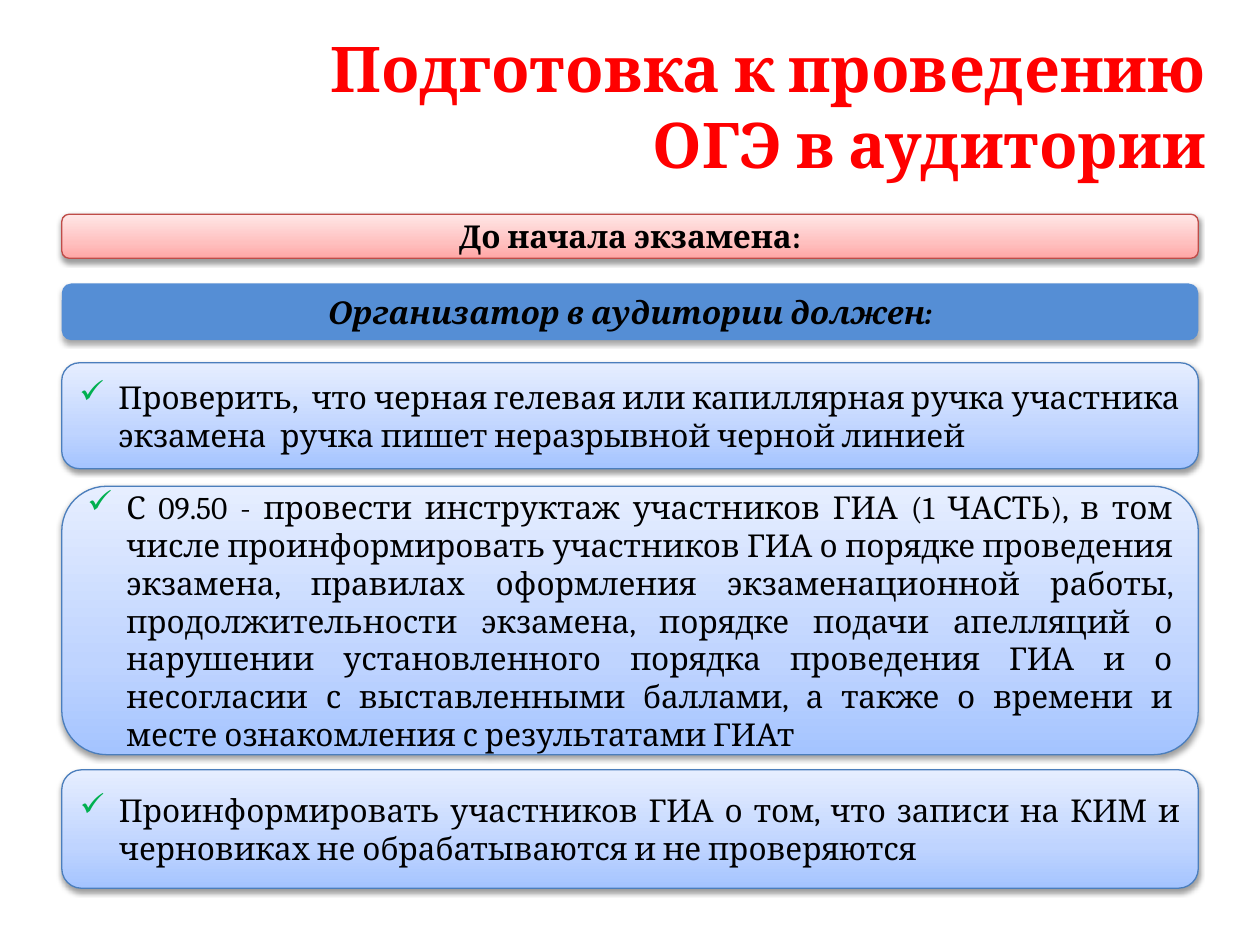
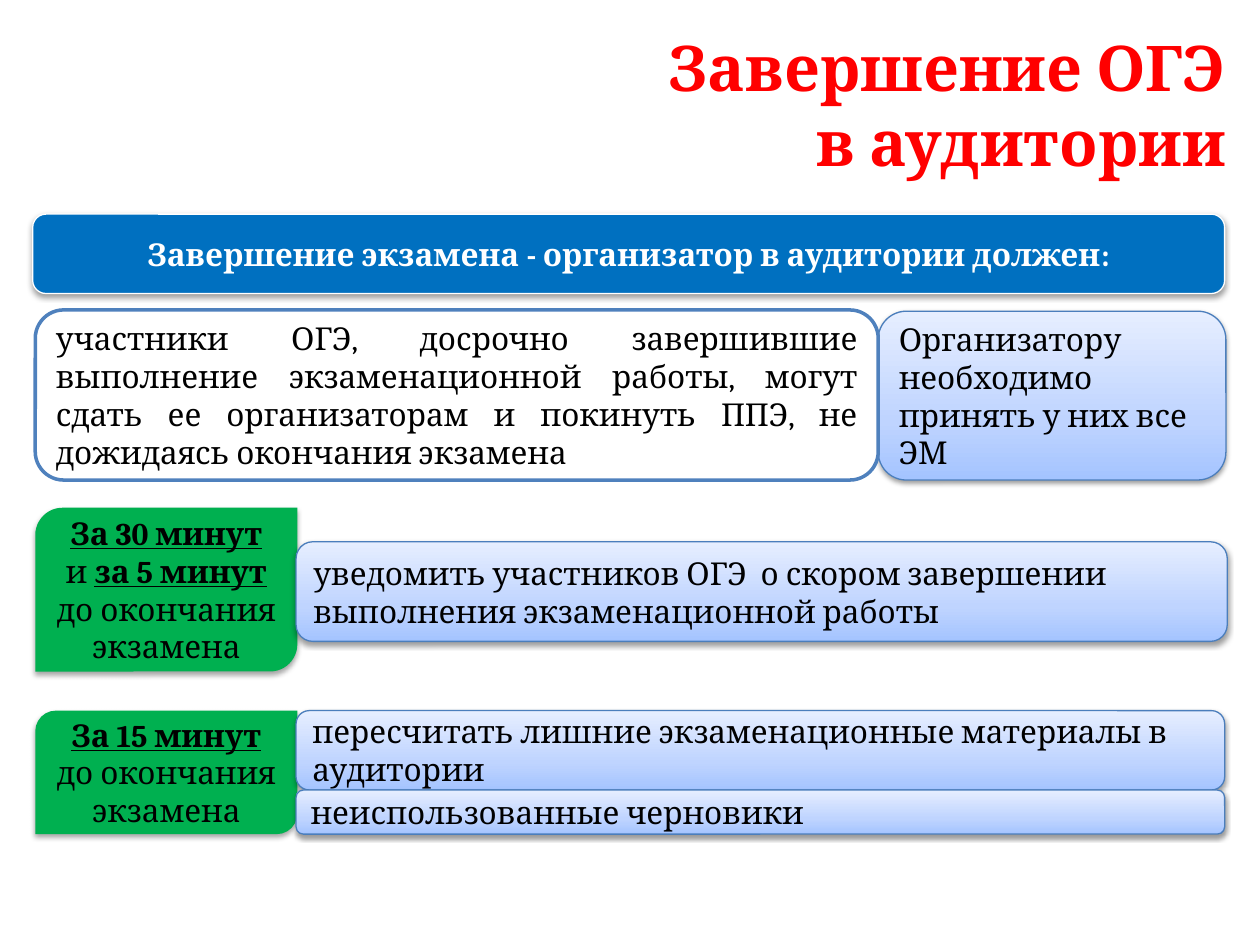
import copy

import pptx
import pptx.util
import pptx.dml.color
import pptx.enum.shapes
import pptx.enum.text
import pptx.oxml
import pptx.oxml.ns
from lxml import etree

Inches = pptx.util.Inches
Pt = pptx.util.Pt
SHAPE = pptx.enum.shapes.MSO_SHAPE
ALIGN = pptx.enum.text.PP_ALIGN
qn = pptx.oxml.ns.qn

FONT = "Cambria"
COLORS = {
    "title": "FF0000", "text": "000000", "white": "FFFFFF", "shadow": "000000",
    "band": "558ED5", "header": "0070C0", "timing": "00B050", "check": "00B050",
    "blue_line": "4B7EBC", "red_line": "BF4C48", "frame": "4F81BD",
}
# Gradients run from the bottom edge to the top edge
GRADIENTS = {
    "blue": [(0, "A4C4FF"), (0.35, "BFD4FF"), (1, "E6EEFF")],
    "red": [(0, "FFA6A5"), (0.35, "FFC0BF"), (1, "FFE7E7")],
}


def rgb(hex_text):
    return pptx.dml.color.RGBColor.from_string(hex_text)


def style_font(font, size=18, color="text", bold=False, italic=False):
    font.name = FONT
    font.size = Pt(size)
    font.bold = bold
    font.italic = italic
    font.color.rgb = rgb(COLORS[color])


def paint_gradient(box, stops):
    box.fill.gradient()
    box.fill.gradient_angle = 90
    stop_list = box._element.spPr.find(".//" + qn("a:gsLst"))
    stop_list.insert(1, copy.deepcopy(stop_list[0]))
    for stop, (position, color) in zip(box.fill.gradient_stops, stops):
        stop.position = position
        stop.color.rgb = rgb(color)


def add_shadow(box, opacity, distance):
    effects = box._element.spPr.find(qn("a:effectLst"))
    shadow = etree.SubElement(
        effects, qn("a:outerShdw"), blurRad=str(Pt(3.1)), dist=str(Pt(distance)),
        dir="5400000", rotWithShape="0")
    color = etree.SubElement(shadow, qn("a:srgbClr"), val=COLORS["shadow"])
    etree.SubElement(color, qn("a:alpha"), val=str(opacity * 1000))


def add_check(para):
    """Give the paragraph a green tick with a hanging indent."""
    properties = para._p.get_or_add_pPr()
    properties.set("marL", str(Inches(0.31)))
    properties.set("indent", str(-Inches(0.31)))
    bullet_color = etree.SubElement(properties, qn("a:buClr"))
    etree.SubElement(bullet_color, qn("a:srgbClr"), val=COLORS["check"])
    etree.SubElement(properties, qn("a:buChar"), char="✓")


def add_panel(page, place, fill, line=None, width=0.75, shadow=True,
              preset=SHAPE.ROUNDED_RECTANGLE):
    box = page.shapes.add_shape(preset, *map(Inches, place))
    box.shadow.inherit = False
    if fill in GRADIENTS:
        paint_gradient(box, GRADIENTS[fill])
    else:
        box.fill.solid()
        box.fill.fore_color.rgb = rgb(COLORS[fill])
    if line:
        box.line.color.rgb = rgb(COLORS[line])
        box.line.width = Pt(width)
    else:
        box.line.fill.background()
    if shadow:
        add_shadow(box, *((38, 1.6) if line else (35, 1.8)))
    box.text_frame.word_wrap = True
    box.text_frame.vertical_anchor = pptx.enum.text.MSO_ANCHOR.MIDDLE
    return box


def write(box, text, align=ALIGN.LEFT, check=False, **font_style):
    para = box.text_frame.paragraphs[0]
    para.text = text
    para.alignment = align
    if check:
        add_check(para)
    style_font(para.font, **font_style)
    # Shape style colours yield to the run colour only
    for span in para.runs:
        span.font.color.rgb = para.font.color.rgb


def add_blue_panel(page, place, text, **options):
    write(add_panel(page, place, "blue", "blue_line"), text, **options)


def add_timing(page, place, paragraphs):
    """Green label; each paragraph is a list of (text, stressed) spans."""
    box = add_panel(page, place, "timing", preset=SHAPE.ROUND_2_DIAG_RECTANGLE)
    frame = box.text_frame
    for index, spans in enumerate(paragraphs):
        para = frame.add_paragraph() if index else frame.paragraphs[0]
        para.alignment = ALIGN.CENTER
        for text, stressed in spans:
            span = para.add_run()
            span.text = text
            style_font(span.font, bold=stressed)
            span.font.underline = stressed


def add_page(deck, title, place):
    page = deck.slides.add_slide(deck.slide_layouts[5])
    box = page.shapes.title
    box.left, box.top, box.width, box.height = map(Inches, place)
    box.text_frame.word_wrap = True
    box.text_frame.auto_size = pptx.enum.text.MSO_AUTO_SIZE.NONE
    box.text_frame.vertical_anchor = pptx.enum.text.MSO_ANCHOR.MIDDLE
    write(box, title, ALIGN.RIGHT, size=36, color="title", bold=True)
    return page


def build_preparation(deck):
    page = add_page(deck, "Подготовка к проведению\vОГЭ в аудитории", (0.67, 0.21, 9, 1.25))
    left, width = 0.49, 9.02

    # Heading bands
    heading = add_panel(page, (left, 1.7, width, 0.35), "red", "red_line")
    write(heading, "До начала экзамена:", ALIGN.CENTER, bold=True)
    band = add_panel(page, (left, 2.25, width, 0.45), "band")
    write(band, "Организатор в аудитории должен:", ALIGN.CENTER, bold=True, italic=True)

    # Duties
    duties = [
        (2.88, 0.84, ALIGN.LEFT,
         "Проверить,  что черная гелевая или капиллярная ручка участника экзамена  "
         "ручка пишет неразрывной черной линией"),
        (3.86, 2.13, ALIGN.JUSTIFY,
         "С 09.50 - провести инструктаж участников ГИА (1 ЧАСТЬ), в том числе "
         "проинформировать участников ГИА о порядке проведения экзамена, правилах "
         "оформления экзаменационной работы, продолжительности экзамена, порядке подачи "
         "апелляций о нарушении установленного порядка проведения ГИА и о несогласии с "
         "выставленными баллами, а также о времени и месте ознакомления с результатами ГИАт"),
        (6.11, 0.94, ALIGN.JUSTIFY,
         "Проинформировать участников ГИА о том, что записи на КИМ и черновиках не "
         "обрабатываются и не проверяются"),
    ]
    for top, height, align, text in duties:
        add_blue_panel(page, (left, top, width, height), text, align=align, check=True)


def build_completion(deck):
    page = add_page(deck, "Завершение ОГЭ\vв аудитории", (1.14, 0.2, 8.69, 1.25))

    # Heading
    heading = add_panel(page, (0.26, 1.7, 9.46, 0.63), "header", "white")
    write(heading, "Завершение экзамена - организатор в аудитории должен:",
          ALIGN.CENTER, color="white", bold=True)

    # Early finishers
    add_blue_panel(page, (6.97, 2.47, 2.76, 1.34),
                   "Организатору необходимо принять у них все ЭМ")
    early = add_panel(page, (0.28, 2.46, 6.69, 1.35), "white", "frame", 2, shadow=False)
    write(early, "участники ОГЭ, досрочно завершившие выполнение экзаменационной работы, "
          "могут сдать ее организаторам и покинуть ППЭ, не дожидаясь окончания экзамена",
          ALIGN.JUSTIFY)

    # Reminders by time left
    before_end = (" до окончания экзамена", False)
    add_timing(page, (0.28, 4.03, 2.08, 1.3), [
        [("За 30 минут", True)],
        [("и ", False), ("за 5 минут", True), before_end],
    ])
    add_timing(page, (0.28, 5.64, 2.08, 0.98), [[("За 15 минут", True), before_end]])
    actions = [
        (4.3, 7.39, 0.79, "уведомить участников ОГЭ  о скором завершении выполнения "
                          "экзаменационной работы"),
        (5.64, 7.37, 0.63, "пересчитать лишние экзаменационные материалы в аудитории"),
        (6.27, 7.37, 0.35, "неиспользованные черновики"),
    ]
    for top, width, height, text in actions:
        add_blue_panel(page, (2.35, top, width, height), text)


def main():
    deck = pptx.Presentation()
    deck.slide_width = Inches(10)
    deck.slide_height = Inches(7.5)
    build_preparation(deck)
    build_completion(deck)
    deck.save("out.pptx")


if __name__ == "__main__":
    main()
